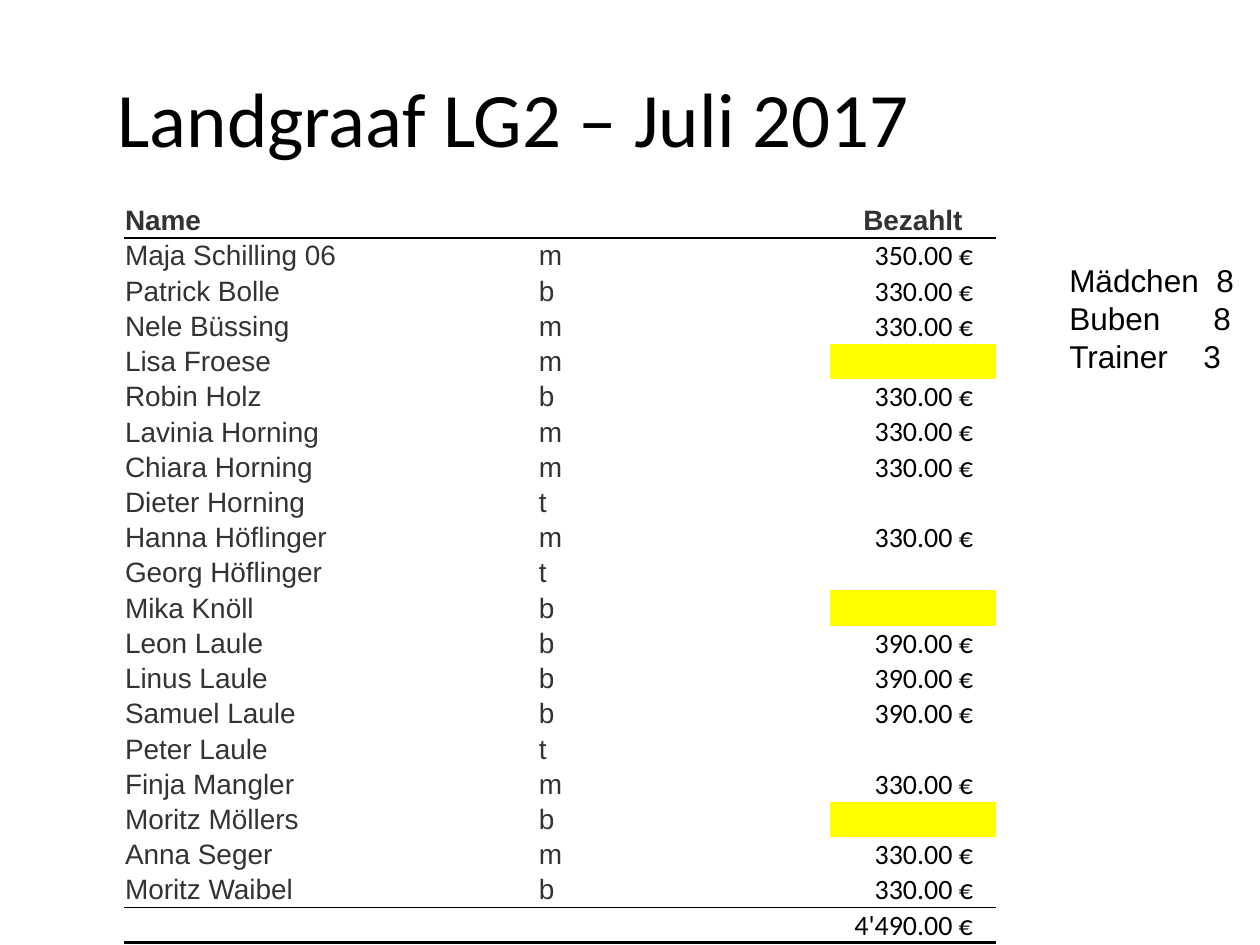
import pptx
import pptx.dml.color
import pptx.enum.text
import pptx.oxml
import pptx.oxml.ns
import pptx.util

PX = 914400 // 126
COLORS = {"text": "000000", "name": "333333", "open": "FFFF00"}
NO_STYLE = "{2D5ABB26-0587-4C30-8999-92F81FD0307C}"
ALIGN = pptx.enum.text.PP_ALIGN
ANCHOR = pptx.enum.text.MSO_ANCHOR

OPEN = "open"
PEOPLE = [
    ("Maja Schilling 06", "m", "350.00 €"),
    ("Patrick Bolle", "b", "330.00 €"),
    ("Nele Büssing", "m", "330.00 €"),
    ("Lisa Froese", "m", OPEN),
    ("Robin Holz", "b", "330.00 €"),
    ("Lavinia Horning", "m", "330.00 €"),
    ("Chiara Horning", "m", "330.00 €"),
    ("Dieter Horning", "t", ""),
    ("Hanna Höflinger", "m", "330.00 €"),
    ("Georg Höflinger", "t", ""),
    ("Mika Knöll", "b", OPEN),
    ("Leon Laule", "b", "390.00 €"),
    ("Linus Laule", "b", "390.00 €"),
    ("Samuel Laule", "b", "390.00 €"),
    ("Peter Laule", "t", ""),
    ("Finja Mangler", "m", "330.00 €"),
    ("Moritz Möllers", "b", OPEN),
    ("Anna Seger", "m", "330.00 €"),
    ("Moritz Waibel", "b", "330.00 €"),
]
ROWS = [("Name", "", "Bezahlt"), *PEOPLE, ("", "", "4'490.00 €")]
RULES = {0: 1, len(PEOPLE): 0.5, len(ROWS) - 1: 2}  # row: points below it
COLUMNS = [414, 292, 166]
# label, count, tab stop in px
COUNTS = [("Mädchen", 8, 147), ("Buben", 8, 144), ("Trainer", 3, 134)]


def px(n):
    return pptx.util.Emu(n * PX)


def rgb(name):
    return pptx.dml.color.RGBColor.from_string(COLORS[name])


def xml(tag, attrs, inner=""):
    return pptx.oxml.parse_xml(
        f'<a:{tag} {pptx.oxml.ns.nsdecls("a")} {attrs}>{inner}</a:{tag}>')


def format_runs(p, size, font, color="text", bold=False):
    for r in p.runs:
        r.font.size = pptx.util.Pt(size)
        r.font.name = font
        r.font.bold = bold
        r.font.color.rgb = rgb(color)


def add_title(s, x, y, w, h):
    tf = s.shapes.add_textbox(px(x), px(y), px(w), px(h)).text_frame
    tf.word_wrap = True
    tf.vertical_anchor = ANCHOR.MIDDLE
    tf.text = "Landgraaf LG2 – Juli 2017"
    format_runs(tf.paragraphs[0], 44, "Calibri")


def rule_below(cell, points):
    fill = f'<a:solidFill><a:srgbClr val="{COLORS["text"]}"/></a:solidFill>'
    cell._tc.get_or_add_tcPr().insert(
        0, xml("lnB", f'w="{int(points * 12700)}"', fill))


def fill_cell(cell, text, row, col):
    header = row == 0
    amount = col == 2 and not header
    cell.margin_left = cell.margin_right = cell.margin_top = px(1)
    cell.margin_bottom = 0
    cell.vertical_anchor = ANCHOR.BOTTOM if amount else ANCHOR.MIDDLE
    if text == OPEN:
        cell.fill.solid()
        cell.fill.fore_color.rgb = rgb("open")
        text = ""
    else:
        cell.fill.background()
    p = cell.text_frame.paragraphs[0]
    if not text:
        p._p.append(xml("endParaRPr", 'sz="1600"'))
    else:
        p.text = text
        if amount:
            p.alignment = ALIGN.RIGHT
            cell.margin_right = px(23)
            format_runs(p, 16, "Calibri")
        else:
            p.alignment = ALIGN.CENTER if col == 2 else ALIGN.LEFT
            format_runs(p, 16, "Arial", "name", header)
    if row in RULES:
        rule_below(cell, RULES[row])


def add_payments(s, x, y, w, h):
    table = s.shapes.add_table(
        len(ROWS), len(COLUMNS), px(x), px(y), px(w), px(h)).table
    table.first_row = table.horz_banding = False
    table._tbl.tblPr.find(pptx.oxml.ns.qn("a:tableStyleId")).text = NO_STYLE
    for col, width in enumerate(COLUMNS):
        table.columns[col].width = px(width)
    for row, values in enumerate(ROWS):
        table.rows[row].height = px(h) // len(ROWS)
        for col, text in enumerate(values):
            fill_cell(table.cell(row, col), text, row, col)


def add_counts(s, x, y, w, h):
    tf = s.shapes.add_textbox(px(x), px(y), px(w), px(h)).text_frame
    tf.word_wrap = True
    tf.margin_right = 0
    for i, (label, count, stop) in enumerate(COUNTS):
        p = tf.add_paragraph() if i else tf.paragraphs[0]
        p.text = f"{label}\t{count}"
        tab = f'<a:tab pos="{px(stop)}" algn="l"/>'
        p._p.get_or_add_pPr().append(xml("tabLst", "", tab))
        format_runs(p, 18, "Arial")


def main():
    prs = pptx.Presentation()
    prs.slide_width, prs.slide_height = px(1260), px(945)
    s = prs.slides.add_slide(prs.slide_layouts[6])
    add_title(s, 105, 38, 1113, 157)
    add_payments(s, 124, 203, sum(COLUMNS), 740)
    add_counts(s, 1057, 255, 191, 127)
    prs.save("out.pptx")


if __name__ == "__main__":
    main()
